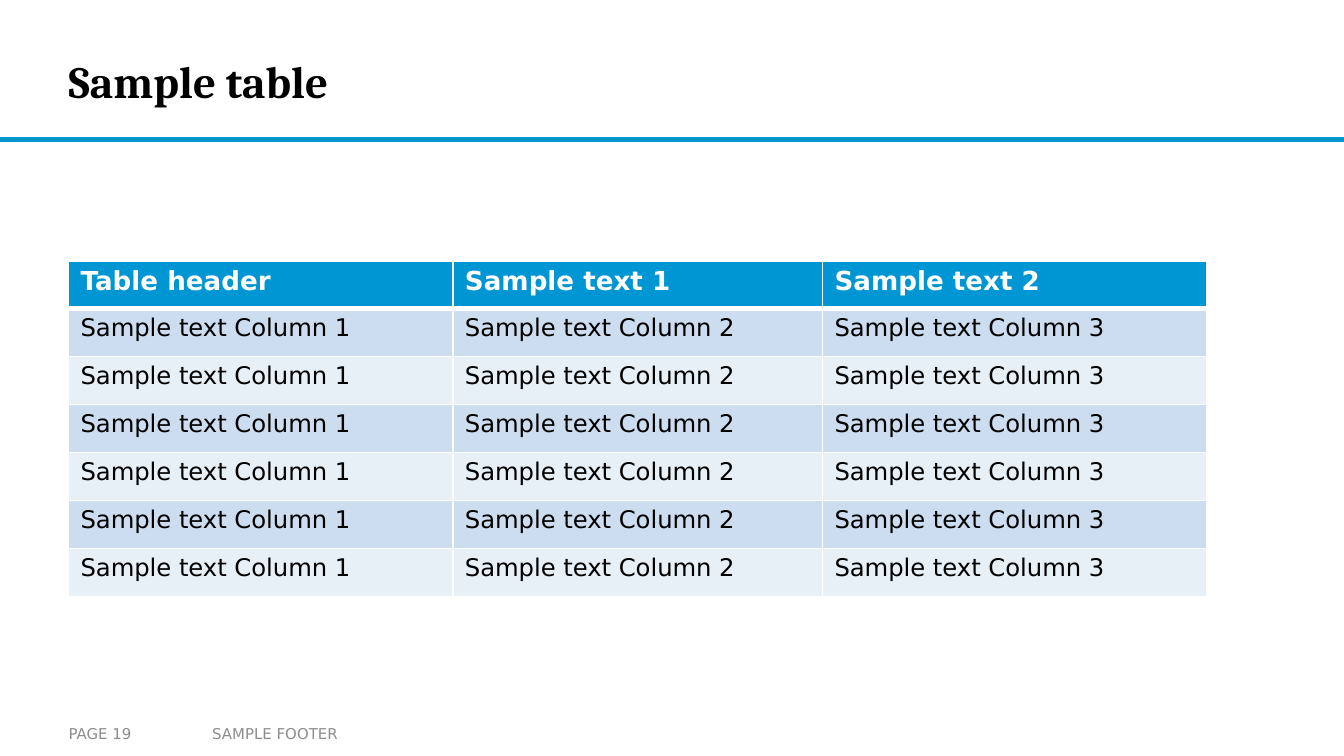
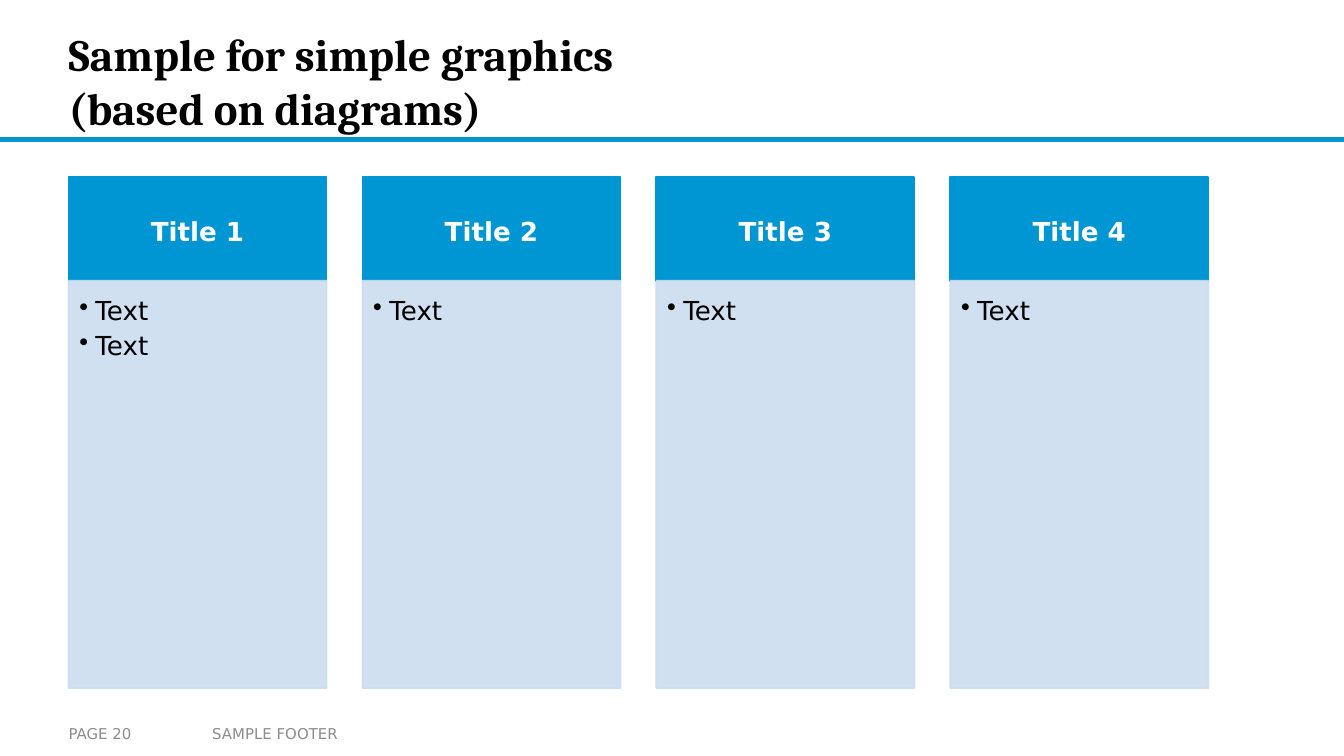
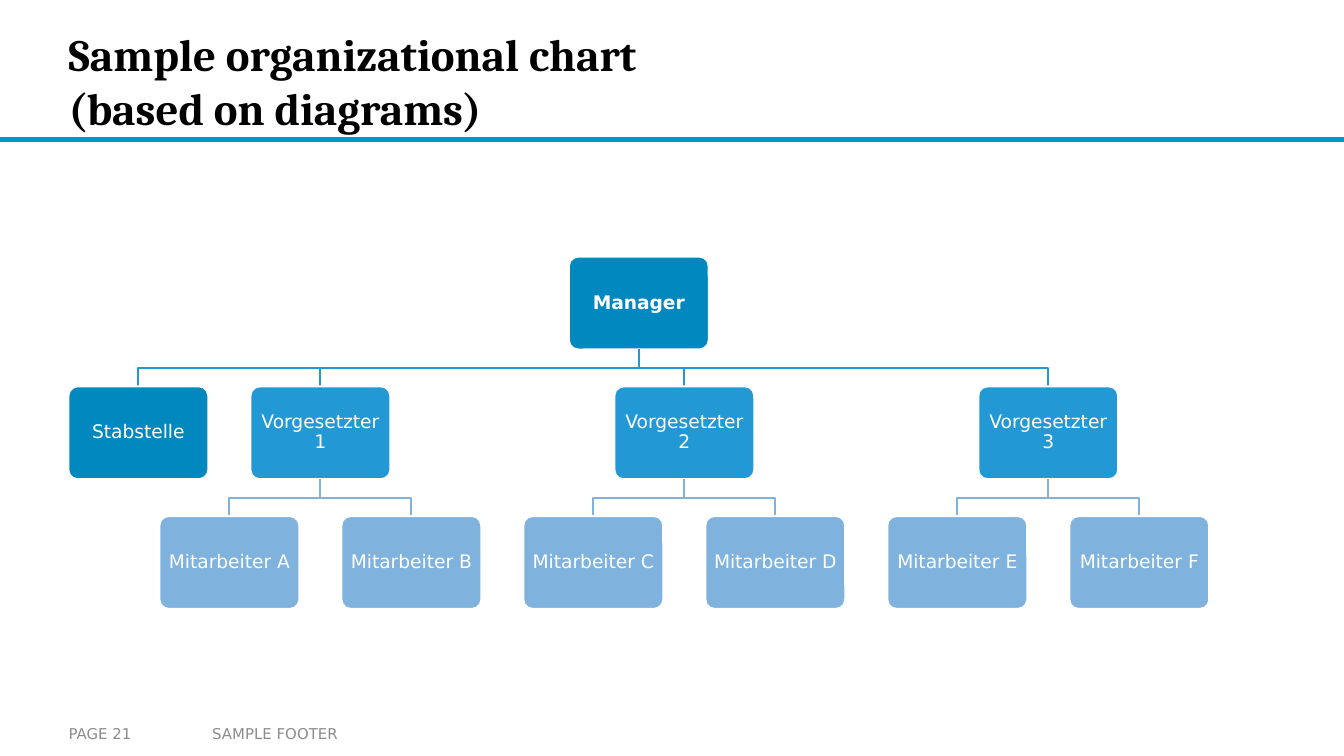
from lxml.etree import SubElement
from pptx import Presentation
from pptx.dml.color import RGBColor
from pptx.enum.shapes import MSO_SHAPE
from pptx.enum.text import MSO_ANCHOR, PP_ALIGN
from pptx.oxml.ns import qn
from pptx.util import Inches, Pt

# Grid: 100 columns and 56.25 rows of equal size
SLIDE_WIDTH, SLIDE_HEIGHT = 10, 5.625
UNIT = SLIDE_WIDTH / 100
LEFT = 5.1

BLUE, DARK_BLUE, MID_BLUE, LIGHT_BLUE = "0096D3", "0088BF", "2298D4", "7FB2DD"
RULE, PALE, PALER = "0C94B7", "CCDDEF", "E7EFF7"
WHITE, BLACK, GREY = "FFFFFF", "000000", "8C8C8C"
BODY_FONT, TITLE_FONT = "DejaVu Sans", "Cambria"


def units(count):
    return Inches(count * UNIT)


def color(hex_string):
    return RGBColor.from_string(hex_string)


def add_element(parent, tag, **attributes):
    return SubElement(parent, qn(tag), attributes)


def add_bullet(paragraph, indent):
    properties = paragraph._p.get_or_add_pPr()
    properties.set("marL", str(units(indent)))
    properties.set("indent", str(-units(indent)))
    add_element(properties, "a:buChar", char="•")


def write(frame, text, size=14, font=BODY_FONT, ink=BLACK, bold=False, align=PP_ALIGN.LEFT,
          anchor=MSO_ANCHOR.TOP, insets=(0, 0, 0, 0), spacing=None, indent=None):
    """Fill a text frame; a list gives one paragraph for each item."""
    frame.word_wrap = True
    frame.vertical_anchor = anchor
    frame.margin_left, frame.margin_top, frame.margin_right, frame.margin_bottom = map(units, insets)
    for index, line in enumerate([text] if isinstance(text, str) else text):
        paragraph = frame.add_paragraph() if index else frame.paragraphs[0]
        paragraph.text = line
        paragraph.alignment = align
        if spacing:
            paragraph.line_spacing = spacing
        if indent:
            add_bullet(paragraph, indent)
        for run in paragraph.runs:
            run.font.name, run.font.size, run.font.bold = font, Pt(size), bold
            run.font.color.rgb = color(ink)


class Deck:
    def __init__(self):
        self.presentation = Presentation()
        self.presentation.slide_width = Inches(SLIDE_WIDTH)
        self.presentation.slide_height = Inches(SLIDE_HEIGHT)
        self.slide = None

    def start_slide(self, title, page):
        self.slide = self.presentation.slides.add_slide(self.presentation.slide_layouts[6])
        self.box(0, 10.3, 100, 0.2, RULE, BLUE)
        self.text(LEFT, 1.8, 74.8, 8.4, title, size=24, font=TITLE_FONT, bold=True,
                  anchor=MSO_ANCHOR.MIDDLE)
        footer = dict(size=8, ink=GREY, anchor=MSO_ANCHOR.MIDDLE)
        self.text(LEFT, 53.3, 9.8, 2.5, f"PAGE {page}", insets=(0, 0.5, 0, 0.5), **footer)
        self.text(14.8, 53.3, 35.2, 2.5, "SAMPLE FOOTER", insets=(1, 0.5, 1, 0.5), **footer)

    def text(self, left, top, width, height, text, **style):
        shape = self.slide.shapes.add_textbox(*map(units, (left, top, width, height)))
        write(shape.text_frame, text, **style)

    def box(self, left, top, width, height, fill, line, text=None, corner=None, opacity=None, **style):
        kind = MSO_SHAPE.ROUNDED_RECTANGLE if corner else MSO_SHAPE.RECTANGLE
        shape = self.slide.shapes.add_shape(kind, *map(units, (left, top, width, height)))
        shape.shadow.inherit = False
        if corner:
            shape.adjustments[0] = corner
        shape.fill.solid()
        shape.fill.fore_color.rgb = color(fill)
        shape.line.color.rgb = color(line)
        shape.line.width = Pt(1)
        if opacity:
            for tint in shape._element.spPr.iter(qn("a:srgbClr")):
                add_element(tint, "a:alpha", val=str(opacity * 1000))
        if text:
            write(shape.text_frame, text, **style)

    def branch(self, points, line):
        start, *others = [(units(x), units(y)) for x, y in points]
        builder = self.slide.shapes.build_freeform(*start)
        builder.add_line_segments(others, close=False)
        shape = builder.convert_to_shape()
        shape.shadow.inherit = False
        shape.fill.background()
        shape.line.color.rgb = color(line)
        shape.line.width = Pt(1)

    def table(self, left, top, widths, row_height, rows):
        frame = self.slide.shapes.add_table(
            len(rows), len(widths), units(left), units(top),
            units(sum(widths)), units(row_height * len(rows)))
        table = frame.table
        for column, width in zip(table.columns, widths):
            column.width = units(width)
        for row_index, values in enumerate(rows):
            table.rows[row_index].height = units(row_height)
            header = row_index == 0
            fill = BLUE if header else PALE if row_index % 2 else PALER
            for cell, value in zip(table.rows[row_index].cells, values):
                self.borders(cell, top=3 if row_index == 1 else 1, bottom=3 if header else 1)
                cell.fill.solid()
                cell.fill.fore_color.rgb = color(fill)
                cell.margin_left = cell.margin_right = units(0.9)
                cell.margin_top = cell.margin_bottom = units(0.4)
                paragraph = cell.text_frame.paragraphs[0]
                run = paragraph.add_run()
                run.text = value
                run.font.name, run.font.size = BODY_FONT, Pt(14 if header else 13)
                run.font.bold = header
                run.font.color.rgb = color(WHITE if header else BLACK)

    def borders(self, cell, top, bottom):
        properties = cell._tc.get_or_add_tcPr()
        for side, width in zip("LRTB", (1, 1, top, bottom)):
            line = add_element(properties, f"a:ln{side}", w=str(Pt(width)))
            add_element(add_element(line, "a:solidFill"), "a:srgbClr", val=WHITE)


def table_slide(deck):
    deck.start_slide("Sample table", 19)
    header = ["Table header", "Sample text 1", "Sample text 2"]
    body = [f"Sample text Column {number}" for number in (1, 2, 3)]
    deck.table(LEFT, 19.4, (28.6, 27.5, 28.6), 3.57, [header] + [body] * 6)


def columns_slide(deck):
    deck.start_slide("Sample for simple graphics\n(based on diagrams)", 20)
    width, step = 19.2, 21.87
    for index, lines in enumerate((["Text", "Text"], ["Text"], ["Text"], ["Text"])):
        left = LEFT + index * step
        deck.box(left, 13.2, width, 7.7, BLUE, BLUE, f"Title {index + 1}", ink=WHITE, bold=True,
                 align=PP_ALIGN.CENTER, anchor=MSO_ANCHOR.MIDDLE,
                 insets=(1.1, 0.6, 1.1, 0.6), spacing=1.1)
        deck.box(left, 20.9, width, 30.3, PALE, PALE, lines, opacity=90,
                 insets=(0.8, 0.8, 1.1, 1.2), spacing=1.1, indent=1.2)


def organization_slide(deck):
    deck.start_slide("Sample organizational chart\n(based on diagrams)", 21)
    width, height = 10.4, 6.9
    half_step, level_step = 6.77, 9.65

    def center(place):
        return LEFT + width / 2 + place * half_step

    def level_top(level):
        return 19.1 + level * level_step

    def person(name, place, level, fill, parent=None, line=None):
        top = level_top(level)
        if parent is not None:
            start = level_top(level - 1) + height
            middle = (start + top) / 2
            deck.branch([(center(parent), start), (center(parent), middle),
                         (center(place), middle), (center(place), top)], line)
        deck.box(center(place) - width / 2, top, width, height, fill, WHITE, name, corner=0.1,
                 size=10, ink=WHITE, bold=level == 0, align=PP_ALIGN.CENTER,
                 anchor=MSO_ANCHOR.MIDDLE, insets=(0.4,) * 4, spacing=0.9)

    # Places count half steps from the leftmost box
    manager = 5.5
    person("Manager", manager, 0, DARK_BLUE)
    person("Stabstelle", 0, 1, DARK_BLUE, manager, MID_BLUE)
    for index, team in enumerate(("AB", "CD", "EF")):
        place = 2 + 4 * index
        person(f"Vorgesetzter {index + 1}", place, 1, MID_BLUE, manager, MID_BLUE)
        for letter, side in zip(team, (-1, 1)):
            person(f"Mitarbeiter {letter}", place + side, 2, LIGHT_BLUE, place, LIGHT_BLUE)


def main():
    deck = Deck()
    table_slide(deck)
    columns_slide(deck)
    organization_slide(deck)
    deck.presentation.save("out.pptx")


if __name__ == "__main__":
    main()
